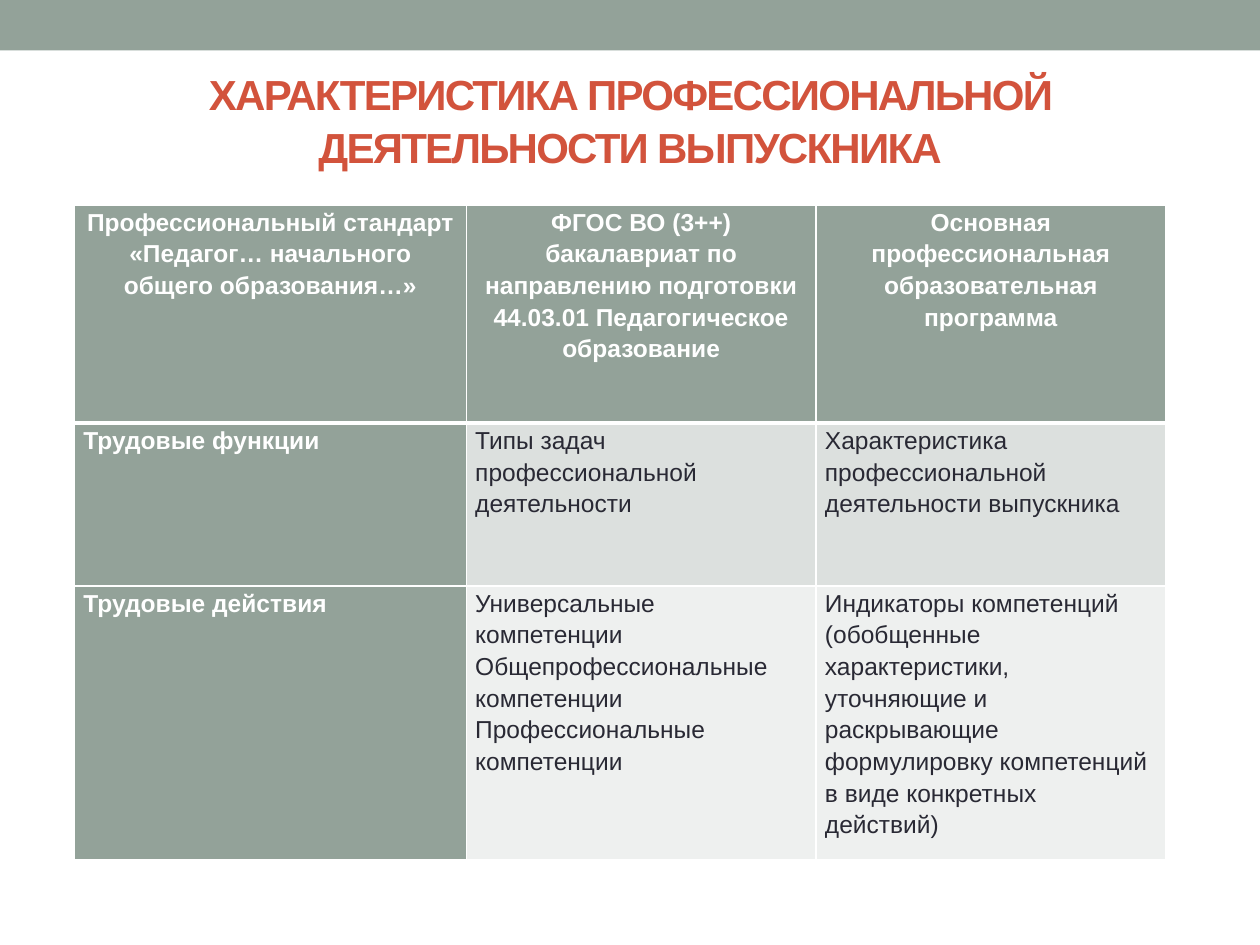
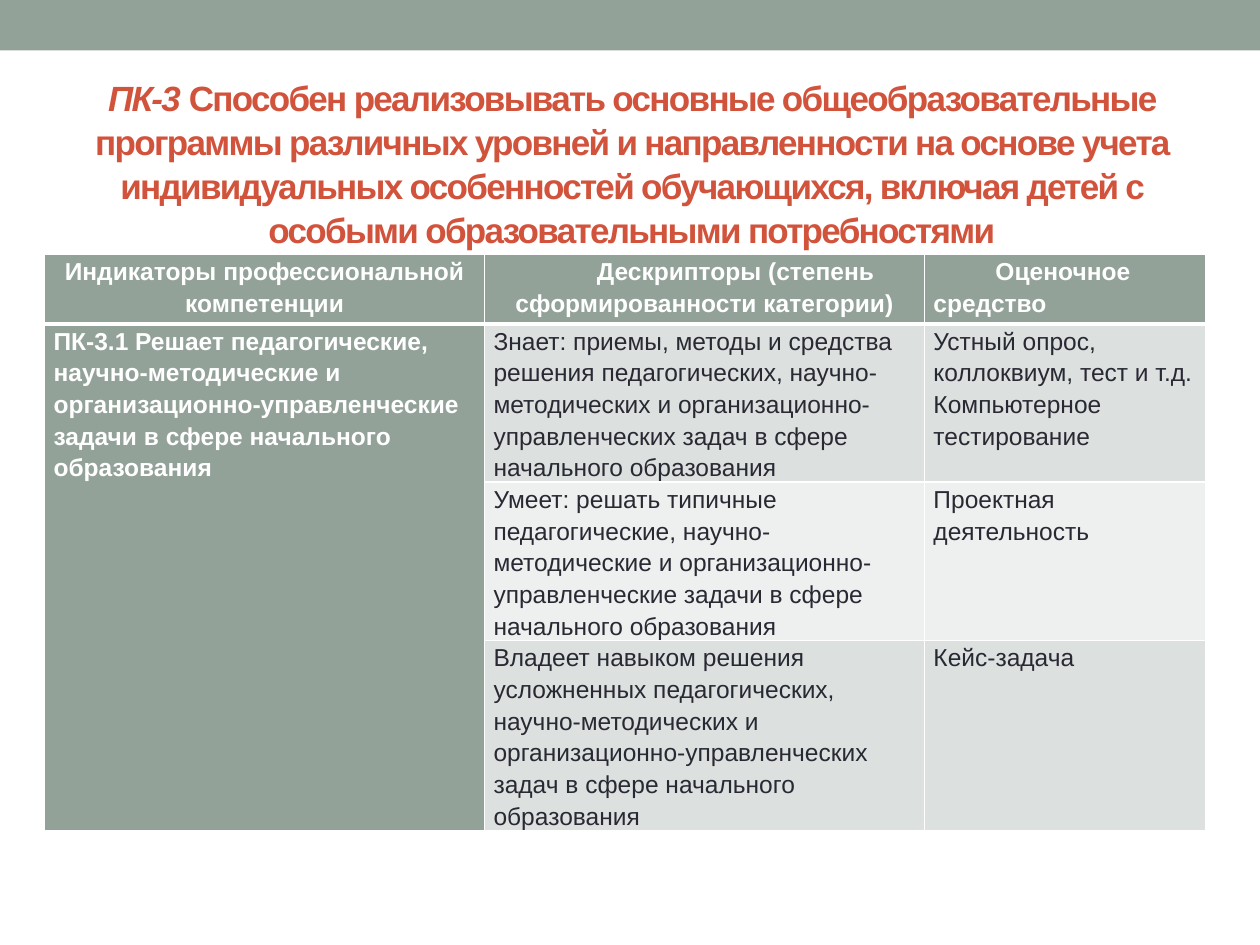
from lxml import etree
from pptx import Presentation
from pptx.dml.color import RGBColor
from pptx.enum.shapes import MSO_SHAPE
from pptx.enum.text import MSO_ANCHOR, MSO_AUTO_SIZE, PP_ALIGN
from pptx.oxml.ns import qn
from pptx.util import Cm, Pt

LEFT, CENTER = PP_ALIGN.LEFT, PP_ALIGN.CENTER
MIDDLE, NO_FIT = MSO_ANCHOR.MIDDLE, MSO_AUTO_SIZE.NONE
FONT = "Arial"
COLORS = {"sage": "93A299", "title": "D2533C", "ink": "292934", "white": "FFFFFF",
          "odd": "DCE0DE", "even": "EEF0EF"}
INDENT = 1.25

# Header cells: text, alignment, first-line indent in cm.
# Body cells: a list of paragraphs, or None where the cell above spans down.
SLIDES = [
    {
        "title": [("ХАРАКТЕРИСТИКА ПРОФЕССИОНАЛЬНОЙ ДЕЯТЕЛЬНОСТИ ВЫПУСКНИКА", False)],
        "title_size": 24,
        "title_box": (1.27, 1.47, 22.86, 1.85),
        "title_bottom": 0.13,
        "table_at": (1.5, 4.13),
        "cols": (7.9, 7.05, 7.05),
        "rows": (4.4, 3.28, 5.52),
        "header": [
            ("Профессиональный стандарт «Педагог… начального общего образования…»", CENTER, 0),
            ("ФГОС ВО (3++) бакалавриат по направлению подготовки 44.03.01 "
             "Педагогическое образование", CENTER, 0),
            ("Основная профессиональная образовательная программа", CENTER, 0),
        ],
        "body": [
            [["Трудовые функции"],
             ["Типы задач профессиональной деятельности"],
             ["Характеристика профессиональной деятельности выпускника"]],
            [["Трудовые действия"],
             ["Универсальные компетенции",
              "Общепрофессиональные компетенции",
              "Профессиональные компетенции"],
             ["Индикаторы компетенций (обобщенные характеристики, уточняющие и раскрывающие "
              "формулировку компетенций в виде конкретных действий)"]],
        ],
    },
    {
        "title": [("ПК-3 ", True),
                  ("Способен реализовывать основные общеобразовательные программы различных "
                   "уровней и направленности на основе учета индивидуальных особенностей "
                   "обучающихся, включая детей с особыми образовательными потребностями", False)],
        "title_size": 20,
        "title_box": (1.3, 1.73, 22.86, 3.91),
        "title_bottom": 0.95,
        "table_at": (0.9, 5.13),
        "cols": (8.87, 8.87, 5.67),
        "rows": (1.4, 3.18, 3.18, 3.81),
        "header": [
            ("Индикаторы профессиональной компетенции", CENTER, 0),
            ("Дескрипторы (степень сформированности категории)", CENTER, INDENT),
            ("Оценочное средство", LEFT, INDENT),
        ],
        "body": [
            [["ПК-3.1 Решает педагогические, научно-методические и "
              "организационно-управленческие задачи в сфере начального образования"],
             ["Знает: приемы, методы и средства решения педагогических, научно-методических и "
              "организационно-управленческих задач в сфере начального образования"],
             ["Устный опрос, коллоквиум, тест и т.д.", "Компьютерное тестирование"]],
            [None,
             ["Умеет: решать типичные педагогические, научно-методические и "
              "организационно-управленческие задачи в сфере начального образования"],
             ["Проектная деятельность"]],
            [None,
             ["Владеет навыком решения усложненных педагогических, научно-методических и "
              "организационно-управленческих задач в сфере начального образования"],
             ["Кейс-задача"]],
        ],
    },
]


def rgb(name):
    return RGBColor.from_string(COLORS[name])


def add_text(p, text, size=14, color="ink", bold=False, italic=False, spacing=0,
             align=LEFT, line=1.15, indent=0):
    p.alignment, p.line_spacing = align, line
    if indent:
        p._p.get_or_add_pPr().set("indent", str(Cm(indent)))
    r = p.add_run()
    r.text = text
    f = r.font
    f.name, f.size, f.bold, f.italic = FONT, Pt(size), bold, italic
    f.color.rgb = rgb(color)
    if spacing:
        r._r.get_or_add_rPr().set("spc", str(spacing * 100))


def set_borders(cell, **widths):
    """Draw white cell edges; widths are points keyed by L, R, T, B."""
    tcPr = cell._tc.get_or_add_tcPr()
    for i, (side, width) in enumerate(widths.items()):
        ln = etree.Element(qn(f"a:ln{side}"), w=str(Pt(width)))
        fill = etree.SubElement(ln, qn("a:solidFill"))
        etree.SubElement(fill, qn("a:srgbClr"), val=COLORS["white"])
        tcPr.insert(i, ln)


def add_master_band(prs, s):
    """Build the top band on a slide, then move it to the back of the master."""
    band = s.shapes.add_shape(MSO_SHAPE.RECTANGLE, 0, 0, prs.slide_width, Cm(1.02))
    band.shadow.inherit = False
    band.fill.solid()
    band.fill.fore_color.rgb = rgb("sage")
    band.line.fill.background()
    prs.slide_master.shapes.element.insert(2, band.element)


def set_title(s, data):
    sp = s.shapes.title
    sp.left, sp.top, sp.width, sp.height = map(Cm, data["title_box"])
    tf = sp.text_frame
    tf.word_wrap, tf.auto_size, tf.vertical_anchor = True, NO_FIT, MIDDLE
    tf.margin_bottom = Cm(data["title_bottom"])
    for text, italic in data["title"]:
        add_text(tf.paragraphs[0], text, size=data["title_size"], color="title", bold=True,
                 italic=italic, spacing=-1, align=CENTER, line=1.05)


def add_competence_table(s, data):
    cols, rows = data["cols"], data["rows"]
    left, top = map(Cm, data["table_at"])
    table = s.shapes.add_table(len(rows), len(cols), left, top,
                               Cm(sum(cols)), Cm(sum(rows))).table
    for column, width in zip(table.columns, cols):
        column.width = Cm(width)
    for row, height in zip(table.rows, rows):
        row.height = Cm(height)

    for i in range(len(rows)):
        for j in range(len(cols)):
            cell = table.cell(i, j)
            dark = i == 0 or j == 0
            cell.margin_left = cell.margin_right = Cm(0.18)
            cell.margin_top = cell.margin_bottom = 0
            cell.fill.solid()
            cell.fill.fore_color.rgb = rgb("sage" if dark else "odd" if i % 2 else "even")
            set_borders(cell, L=1, R=1, T=3 if i == 1 else 1, B=1 if i else 3)
            if i == 0:
                text, align, indent = data["header"][j]
                paragraphs = [text]
            else:
                paragraphs, align, indent = data["body"][i - 1][j], LEFT, 0
            if paragraphs is None:
                continue
            tf = cell.text_frame
            for n, text in enumerate(paragraphs):
                p = tf.add_paragraph() if n else tf.paragraphs[0]
                add_text(p, text, color="white" if dark else "ink", bold=dark,
                         align=align, indent=indent)

    if data["body"][-1][0] is None:
        table.cell(1, 0).merge(table.cell(len(rows) - 1, 0))


def main():
    prs = Presentation()
    prs.slide_width, prs.slide_height = Cm(25.4), Cm(19.05)
    title_only = prs.slide_layouts[5]
    for n, data in enumerate(SLIDES):
        s = prs.slides.add_slide(title_only)
        if n == 0:
            add_master_band(prs, s)
        set_title(s, data)
        add_competence_table(s, data)
    prs.save("out.pptx")


if __name__ == "__main__":
    main()
